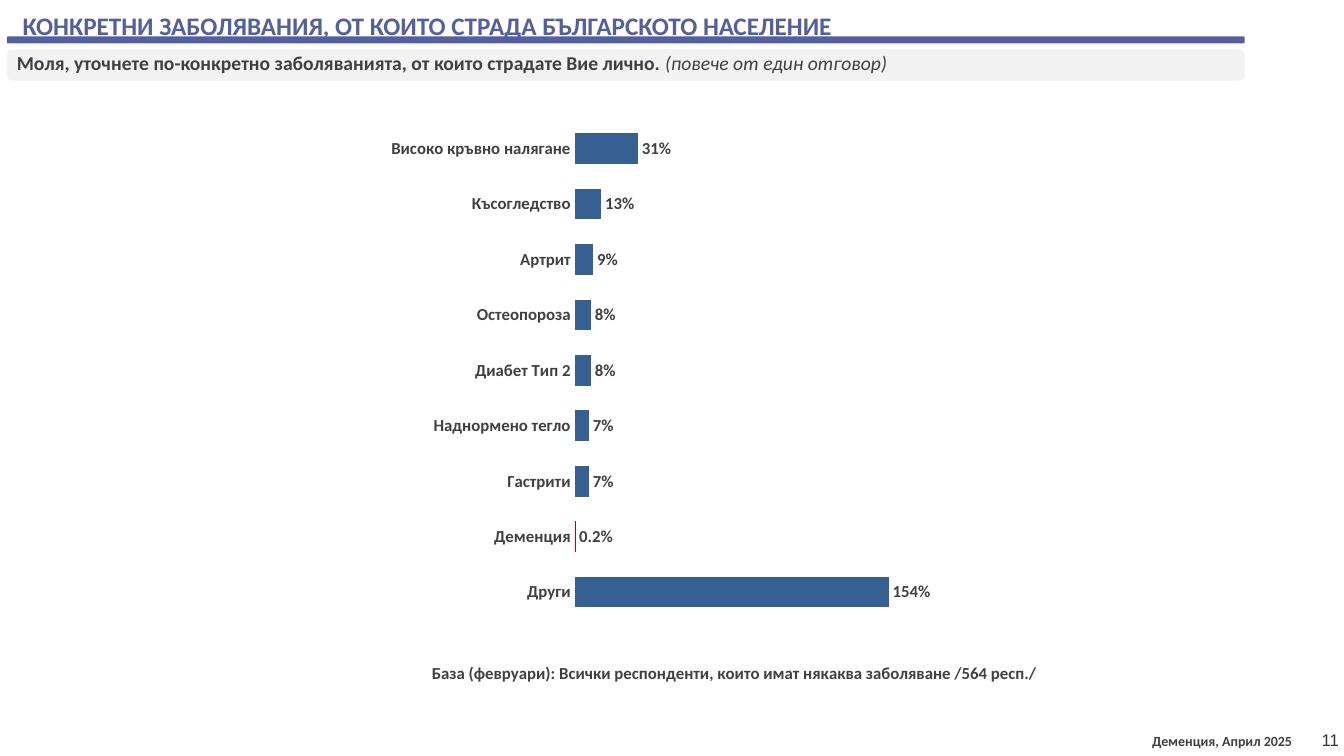
import pptx
import pptx.chart.data
import pptx.dml.color
import pptx.enum.chart
import pptx.enum.shapes
import pptx.enum.text
import pptx.oxml
import pptx.oxml.ns
import pptx.util

Pt = pptx.util.Pt
ALIGN = pptx.enum.text.PP_ALIGN
DARK = "404040"


def style(font, size, color, bold=True, name="Calibri"):
    font.size = Pt(size)
    font.name = name
    font.bold = bold
    font.color.rgb = pptx.dml.color.RGBColor.from_string(color)


def place(element, position, **fractions):
    """Give a chart part a manual layout, in fractions of the chart."""
    for old in element.findall(pptx.oxml.ns.qn("c:layout")):
        element.remove(old)
    settings = "".join(f'<c:{key} val="{value}"/>' for key, value in fractions.items())
    element.insert(position, pptx.oxml.parse_xml(
        f'<c:layout {pptx.oxml.ns.nsdecls("c")}><c:manualLayout>{settings}'
        '</c:manualLayout></c:layout>'))


deck = pptx.Presentation()
deck.slide_width, deck.slide_height = Pt(960), Pt(540)
page = deck.slides.add_slide(deck.slide_layouts[5])

# Rule under the title and band behind the question
for top, height, color in [(26, 5, "545FA0"), (35.3, 22.3, "F2F2F2")]:
    band = page.shapes.add_shape(pptx.enum.shapes.MSO_SHAPE.ROUNDED_RECTANGLE,
                                 Pt(5), Pt(top), Pt(884), Pt(height))
    band.shadow.inherit = False
    band.fill.solid()
    band.fill.fore_color.rgb = pptx.dml.color.RGBColor.from_string(color)
    band.line.fill.background()

# Title
title = page.shapes.title
title.left, title.top, title.width, title.height = Pt(5), Pt(3.6), Pt(850), Pt(29)
frame = title.text_frame
frame.text = "КОНКРЕТНИ ЗАБОЛЯВАНИЯ, ОТ КОИТО СТРАДА БЪЛГАРСКОТО НАСЕЛЕНИЕ"
frame.margin_left = Pt(11.2)
frame.auto_size = pptx.enum.text.MSO_AUTO_SIZE.NONE
frame.vertical_anchor = pptx.enum.text.MSO_ANCHOR.MIDDLE
frame.paragraphs[0].alignment = ALIGN.LEFT
style(frame.paragraphs[0].runs[0].font, 18, "545F9D")

# Question, footer and page number: place, alignment, right margin, font, runs
texts = [
    ((5, 33.1, 850, 24.5), ALIGN.JUSTIFY, 7.2, (14, DARK, "Calibri"),
     [("Моля, уточнете по-конкретно заболяванията, от които страдате Вие лично. ", True, False),
      ("(повече от един отговор)", False, True)]),
    ((815.8, 519.8, 123, 19.4), ALIGN.LEFT, 7.2, (10, DARK, "Calibri"),
     [("Деменция, Април 2025", True, False)]),
    ((760, 517.7, 200, 20.2), ALIGN.RIGHT, 3.6, (12, "333332", "Arial"),
     [("11", False, False)]),
]
for area, alignment, margin, (size, color, name), runs in texts:
    box = page.shapes.add_textbox(*map(Pt, area))
    box.text_frame.word_wrap = True
    box.text_frame.margin_right = Pt(margin)
    para = box.text_frame.paragraphs[0]
    para.alignment = alignment
    for text, bold, italic in runs:
        span = para.add_run()
        span.text = text
        style(span.font, size, color, bold, name)
        span.font.italic = italic

# Bar chart of diseases
diseases = {
    "Високо кръвно налягане": 0.31,
    "Късогледство": 0.13,
    "Артрит": 0.09,
    "Остеопороза": 0.08,
    "Диабет Тип 2": 0.08,
    "Наднормено тегло": 0.07,
    "Гастрити": 0.07,
    "Деменция": 0.002,
    "Други": 1.54,
}
data = pptx.chart.data.CategoryChartData()
data.categories = list(diseases)
data.add_series("Series 1", list(diseases.values()))
chart = page.shapes.add_chart(pptx.enum.chart.XL_CHART_TYPE.BAR_CLUSTERED, Pt(248.4),
                              Pt(61.2), Pt(551.5), Pt(458.6), data).chart
style(chart.font, 10, "000000", False, "Arial")
chart.has_legend = False
place(chart._chartSpace.chart.plotArea, 0, layoutTarget="inner", xMode="edge",
      yMode="edge", x=0.294, y=0.055, w=0.528, h=0.777)

# Base note, set as the chart title below the bars
chart.has_title = True
note = chart.chart_title
note.text_frame.text = "База (февруари): Всички респонденти, които имат някаква заболяване /564 респ./"
style(note.text_frame.paragraphs[0].runs[0].font, 12, DARK)
note.include_in_layout = False
place(note._element, 1, xMode="edge", yMode="edge", x=0.105, y=0.893)

# Axes
diseases_axis = chart.category_axis
diseases_axis.reverse_order = True
diseases_axis.major_tick_mark = pptx.enum.chart.XL_TICK_MARK.NONE
diseases_axis.format.line.fill.background()
style(diseases_axis.tick_labels.font, 12, DARK)
share_axis = chart.value_axis
share_axis.minimum_scale, share_axis.maximum_scale = 0, 2
share_axis.has_major_gridlines = False
share_axis.visible = False

# Bars and their labels; shares under one percent keep a decimal
plot = chart.plots[0]
plot.gap_width = 80
plot.vary_by_categories = False
series = plot.series[0]
dementia = series.points[list(diseases).index("Деменция")]
for bar, color in [(series, "376092"), (dementia, "C00000")]:
    bar.format.fill.solid()
    bar.format.fill.fore_color.rgb = pptx.dml.color.RGBColor.from_string(color)
labels = series.data_labels
labels.show_value = True
labels.number_format = "[<0.01]0.0%;0%"
labels.number_format_is_linked = False
labels.position = pptx.enum.chart.XL_LABEL_POSITION.OUTSIDE_END
style(labels.font, 12, DARK)

deck.save("out.pptx")
